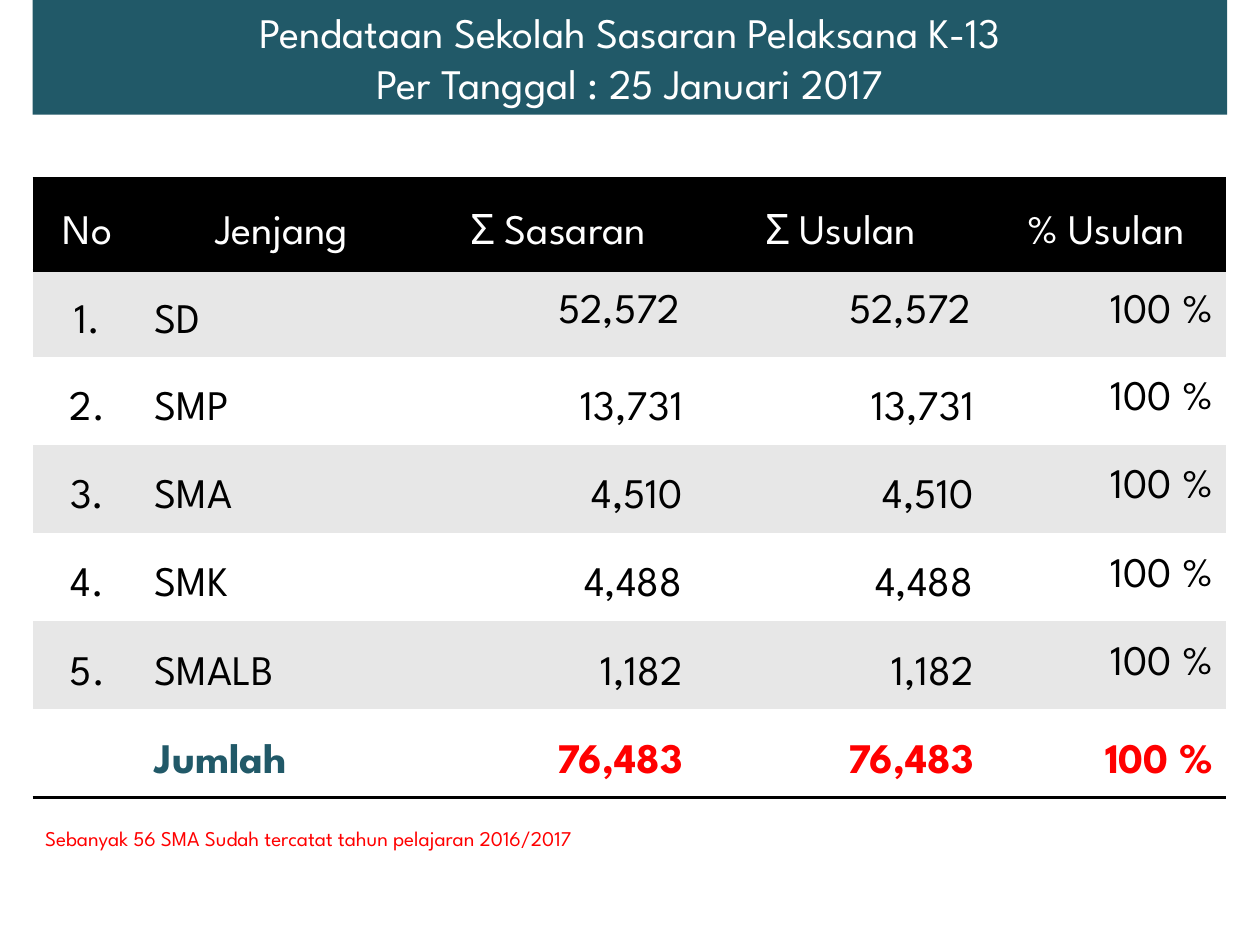
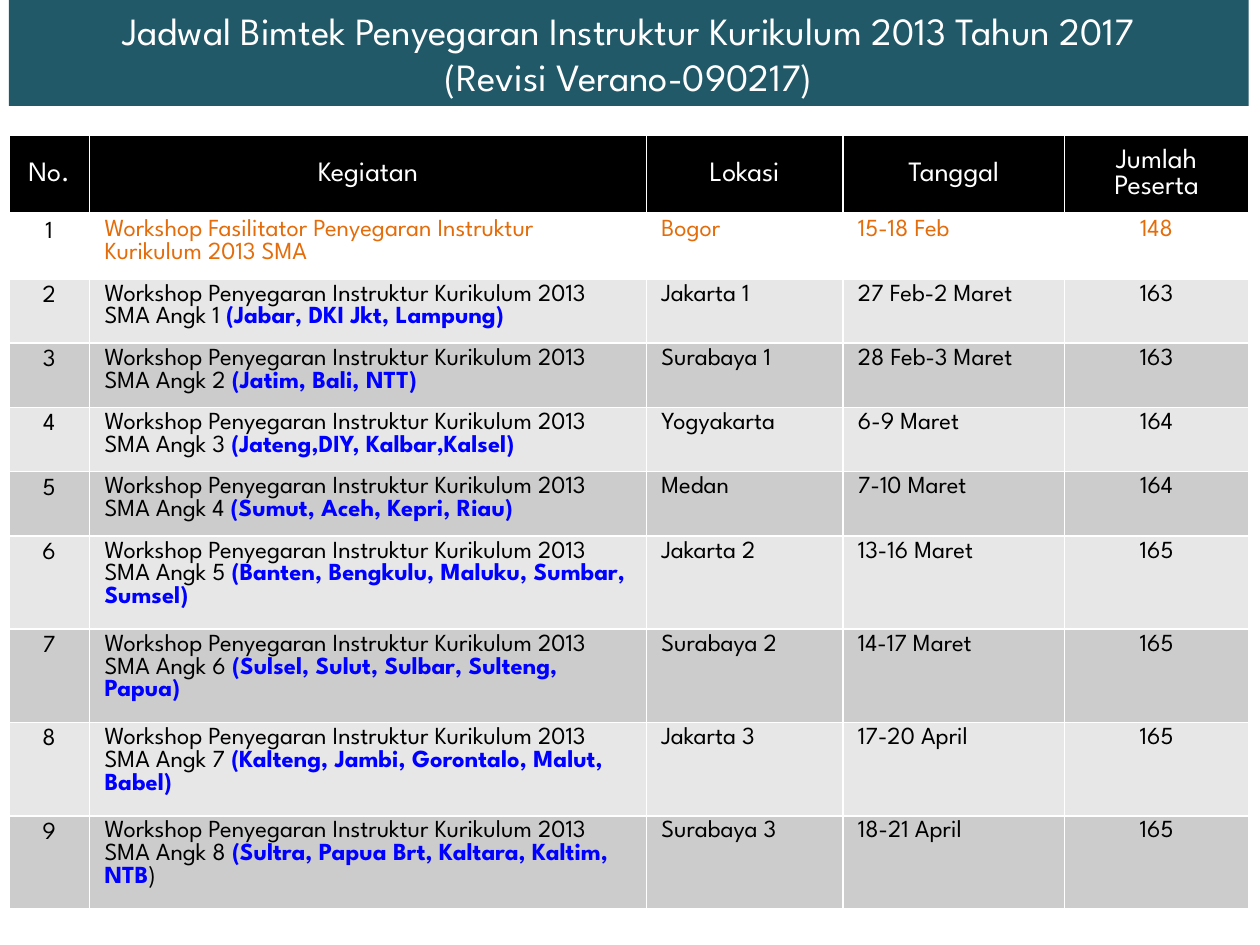
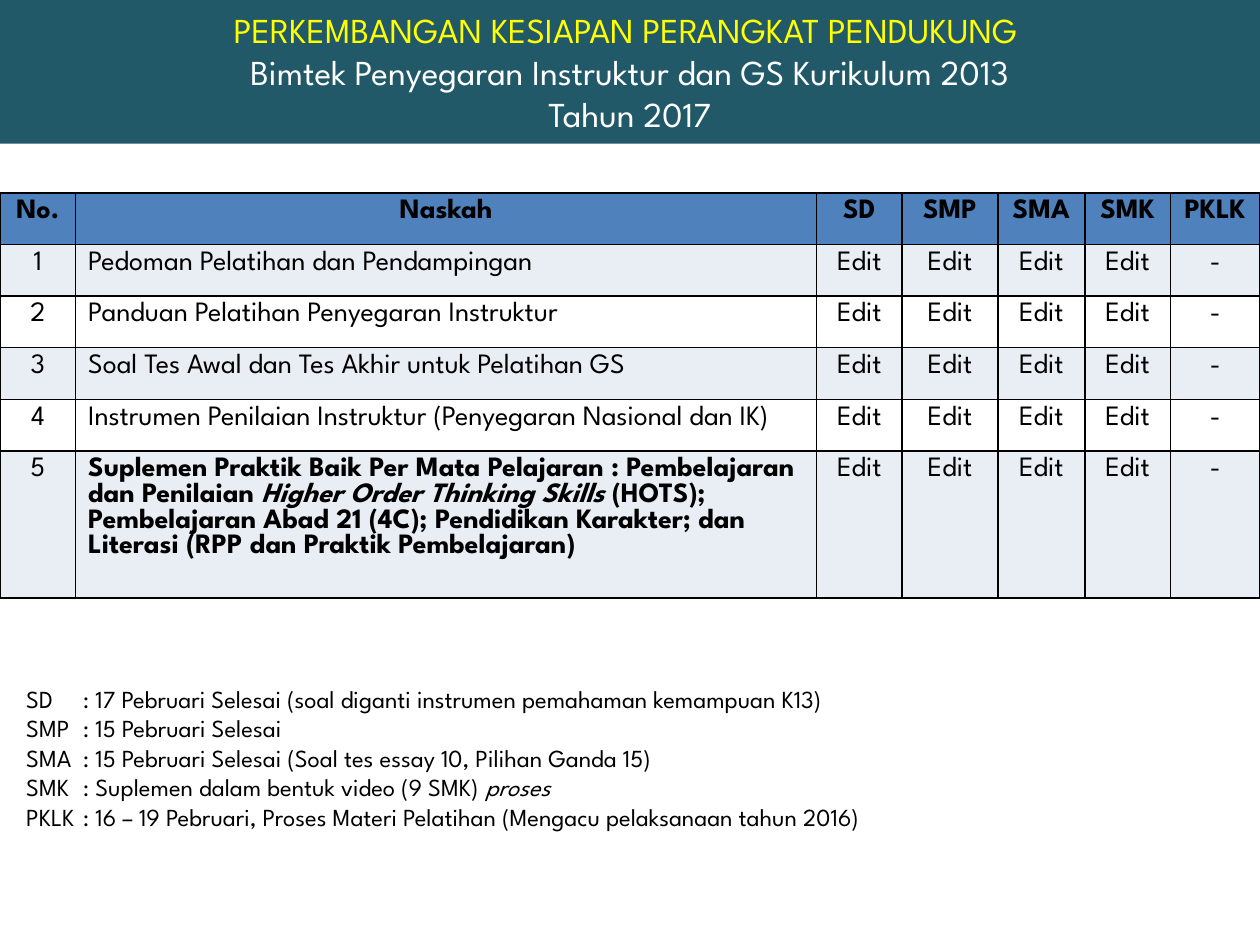
import pptx
import pptx.util
import pptx.dml.color
import pptx.enum.shapes
import pptx.enum.text
import pptx.oxml.ns
import lxml.etree
from dataclasses import dataclass


@dataclass(frozen=True)
class Theme:
    font: str = "League Spartan"
    teal: str = "215968"
    white: str = "FFFFFF"
    black: str = "000000"
    red: str = "FF0000"
    yellow: str = "FFFF00"
    orange: str = "E46C0A"
    blue: str = "0000FF"
    light: str = "E7E7E7"
    gray: str = "CCCCCC"
    head: str = "4F81BD"
    pale: str = "E9EDF4"
    huge: int = 24
    large: int = 22
    title: int = 20
    body: int = 16
    small: int = 14
    tiny: int = 12


T = Theme()
WIDE, HIGH = 10, 7.5
inch = pptx.util.Inches
ALIGN = pptx.enum.text.PP_ALIGN
AL = {"l": ALIGN.LEFT, "c": ALIGN.CENTER, "r": ALIGN.RIGHT}
MID = pptx.enum.text.MSO_ANCHOR.MIDDLE
TOP = pptx.enum.text.MSO_ANCHOR.TOP

# Content: schools
SCHOOL_TITLE = ["Pendataan Sekolah Sasaran Pelaksana K-13",
                "Per Tanggal : 25 Januari 2017"]
LEVELS = [("SD", "52,572"), ("SMP", "13,731"), ("SMA", "4,510"),
          ("SMK", "4,488"), ("SMALB", "1,182")]
SCHOOLS = [("No", "Jenjang", "Σ Sasaran", "Σ Usulan", "% Usulan")]
SCHOOLS += [(f"{n}.", name, sum_, sum_, "100 %")
            for n, (name, sum_) in enumerate(LEVELS, 1)]
SCHOOLS += [("", "Jumlah", "76,483", "76,483", "100 %")]
SCHOOL_NOTE = "Sebanyak 56 SMA Sudah tercatat tahun pelajaran 2016/2017"

# Content: schedule
PLAN_TITLE = ["Jadwal Bimtek Penyegaran Instruktur Kurikulum 2013 Tahun 2017",
              "(Revisi Verano-090217)"]
PLAN_HEAD = ("No.", "Kegiatan", "Lokasi", "Tanggal", "Jumlah Peserta")
FIRST = ("1", "Workshop Fasilitator Penyegaran Instruktur Kurikulum 2013 SMA",
         "Bogor", "15-18 Feb", "148")
BATCH = "Workshop Penyegaran Instruktur Kurikulum 2013 SMA Angk "
BATCHES = [
    ("(Jabar, DKI Jkt, Lampung)", "Jakarta 1", "27 Feb-2 Maret", "163"),
    ("(Jatim, Bali, NTT)", "Surabaya 1", "28 Feb-3 Maret", "163"),
    ("(Jateng,DIY, Kalbar,Kalsel)", "Yogyakarta", "6-9 Maret", "164"),
    ("(Sumut, Aceh, Kepri, Riau)", "Medan", "7-10 Maret", "164"),
    ("(Banten, Bengkulu, Maluku, Sumbar, Sumsel)", "Jakarta 2", "13-16 Maret", "165"),
    ("(Sulsel, Sulut, Sulbar, Sulteng, Papua)", "Surabaya 2", "14-17 Maret", "165"),
    ("(Kalteng, Jambi, Gorontalo, Malut, Babel)", "Jakarta 3", "17-20 April", "165"),
    ("(Sultra, Papua Brt, Kaltara, Kaltim, NTB", "Surabaya 3", "18-21 April", "165"),
]

# Content: documents
DOC_TITLE = [[("PERKEMBANGAN KESIAPAN PERANGKAT PENDUKUNG ", {"color": T.yellow})],
             "Bimtek Penyegaran Instruktur dan GS Kurikulum 2013",
             "Tahun 2017"]
DOC_HEAD = ("No.", "Naskah", "SD", "SMP", "SMA", "SMK", "PKLK")
BOLD = {"bold": True}
DOCS = [
    "Pedoman Pelatihan dan Pendampingan",
    "Panduan Pelatihan Penyegaran Instruktur",
    "Soal Tes Awal dan Tes Akhir untuk Pelatihan GS",
    "Instrumen Penilaian Instruktur (Penyegaran Nasional dan IK)",
    [("Suplemen Praktik Baik Per Mata Pelajaran : Pembelajaran dan Penilaian ", BOLD),
     ("Higher Order Thinking Skills", {"bold": True, "italic": True}),
     (" (HOTS); Pembelajaran Abad 21 (4C); Pendidikan Karakter; dan Literasi "
      "(RPP dan Praktik Pembelajaran)", BOLD)],
]
NOTES = [
    "SD\t: 17 Pebruari Selesai (soal diganti instrumen pemahaman kemampuan K13)",
    "SMP\t: 15 Pebruari Selesai",
    "SMA\t: 15 Pebruari Selesai (Soal tes essay 10, Pilihan Ganda 15)",
    [("SMK\t: Suplemen dalam bentuk video (9 SMK) ", {}), ("proses", {"italic": True})],
    "PKLK\t: 16 – 19 Pebruari, Proses Materi Pelatihan (Mengacu pelaksanaan tahun 2016)",
]


# Text helpers
def rgb(code):
    return pptx.dml.color.RGBColor.from_string(code)


def write(para, text, size, color, align="l", bold=False, space=None):
    para.alignment = AL[align]
    if space:
        para.line_spacing = space
    for part, style in ([(text, {})] if isinstance(text, str) else text):
        run = para.add_run()
        run.text = part
        font = run.font
        font.name, font.size = T.font, pptx.util.Pt(size)
        font.bold = style.get("bold", bold)
        font.italic = style.get("italic", False)
        font.color.rgb = rgb(style.get("color", color))


def fill_text(frame, lines, size, color, align="l"):
    for n, line in enumerate(lines):
        para = frame.add_paragraph() if n else frame.paragraphs[0]
        write(para, line, size, color, align)


def band(slide, left, top, width, height, lines, size):
    box = slide.shapes.add_shape(pptx.enum.shapes.MSO_SHAPE.RECTANGLE,
                                 inch(left), inch(top), inch(width), inch(height))
    box.shadow.inherit = False
    box.fill.solid()
    box.fill.fore_color.rgb = rgb(T.teal)
    box.line.fill.background()
    box.text_frame.word_wrap = True
    box.text_frame.vertical_anchor = MID
    fill_text(box.text_frame, lines, size, T.white, "c")


def note(slide, left, top, width, height, lines, size, color, wrap=True):
    box = slide.shapes.add_textbox(inch(left), inch(top), inch(width), inch(height))
    box.text_frame.word_wrap = wrap
    fill_text(box.text_frame, lines, size, color)
    return box.text_frame


# Table helpers
def child(node, tag, **attrs):
    return lxml.etree.SubElement(node, pptx.oxml.ns.qn(tag), attrs)


def edge(cell, lines):
    props = cell._tc.get_or_add_tcPr()
    for side in "LRTB":
        color, width = lines.get(side, (None, 0))
        line = child(props, f"a:ln{side}", w=str(pptx.util.Pt(width)))
        if color:
            child(child(line, "a:solidFill"), "a:srgbClr", val=color)
        else:
            child(line, "a:noFill")


def grid(slide, left, top, cols, highs, rows, look):
    """look(row, col) gives text style, fill, edges, anchor and margins."""
    table = slide.shapes.add_table(len(rows), len(cols), inch(left), inch(top),
                                   inch(sum(cols)), inch(sum(highs))).table
    table.first_row = table.horz_banding = False
    for col, width in zip(table.columns, cols):
        col.width = inch(width)
    for row, high in zip(table.rows, highs):
        row.height = inch(high)
    for r, row in enumerate(rows):
        for c, text in enumerate(row):
            cell, style = table.cell(r, c), look(r, c)
            edge(cell, style["edges"])
            if style["fill"]:
                cell.fill.solid()
                cell.fill.fore_color.rgb = rgb(style["fill"])
            else:
                cell.fill.background()
            cell.vertical_anchor = style.get("anchor", TOP)
            if "pad" in style:
                side, above, below = style["pad"]
                cell.margin_left = cell.margin_right = inch(side)
                cell.margin_top, cell.margin_bottom = inch(above), inch(below)
            if text:
                write(cell.text_frame.paragraphs[0], text, **style["text"])


# Looks of the three tables
def school_look(r, c):
    last = len(SCHOOLS) - 1
    rule = (T.black, 2)
    color = T.white if r == 0 else T.black
    if r == last:
        color = T.teal if c == 1 else T.red
    single = 0 < r < last and (c == 4 or r == 1 and c > 1)
    edges = {}
    if r < 2:
        edges["T"] = rule
    if r in (0, last):
        edges["B"] = rule
    style = {"fill": T.black if r == 0 else (T.white, T.light)[r % 2],
             "edges": edges, "anchor": MID,
             "text": {"size": T.huge, "color": color, "bold": r == last,
                      "align": "c" if r == 0 else "clrrr"[c],
                      "space": None if single else 1.5}}
    if r == 1 and c in (2, 3):
        style["pad"] = (0.12, 0.05, 0.05)
    return style


def plan_look(r, c):
    edges = dict.fromkeys("LRTB", (T.white, 1))
    if r < 2:
        edges["B" if r == 0 else "T"] = (T.white, 3)
    if r == 0:
        return {"fill": T.black, "edges": edges, "anchor": MID,
                "text": {"size": T.body, "color": T.white, "align": "c"}}
    style = {"fill": None if r == 1 else (T.light, T.gray)[r % 2], "edges": edges,
             "text": {"size": T.small, "align": "clllc"[c],
                      "color": T.orange if r == 1 and c else T.black}}
    if c:
        style["pad"] = (0.12, 0.04, 0)
    return style


def doc_look(r, c):
    return {"fill": T.head if r == 0 else (T.white, T.pale)[r % 2],
            "edges": dict.fromkeys("LRTB", (T.black, 1)),
            "text": {"size": T.body, "color": T.black, "bold": r == 0,
                     "align": "l" if r and c == 1 else "c"}}


# Slides
def schools(slide):
    left = 0.26
    band(slide, left, 0, WIDE - 2 * left, 0.91, SCHOOL_TITLE, T.huge)
    grid(slide, left, 1.42, [0.87, 2.21, 2.18, 2.31, 1.9],
         [0.73, 0.68] + [0.7] * 5, SCHOOLS, school_look)
    note(slide, left, 6.5, 5.18, 0.3, [SCHOOL_NOTE], T.tiny, T.red, wrap=False)


def plan(slide):
    rows = [PLAN_HEAD, FIRST]
    for n, (areas, *rest) in enumerate(BATCHES, 1):
        text = [(f"{BATCH}{n} ", {}), (areas, {"color": T.blue, "bold": True})]
        if not areas.endswith(")"):
            text.append((")", {}))
        rows.append((str(n + 1), text, *rest))
    grid(slide, 0.07, 1.07, [0.64, 4.42, 1.56, 1.76, 1.46],
         [0.63] + [0.51] * 5 + [0.74] * 4, rows, plan_look)
    band(slide, 0.07, 0, 9.84, 0.84, PLAN_TITLE, T.large)


def docs(slide):
    band(slide, 0, -0.01, WIDE, 1.15, DOC_TITLE, T.title)
    rows = [DOC_HEAD] + [(str(n), text, *["Edit"] * 4, "-")
                         for n, text in enumerate(DOCS, 1)]
    grid(slide, 0, 1.53, [0.6, 5.88, 0.68, 0.76, 0.69, 0.68, 0.71],
         [0.41] * 5 + [0.91], rows, doc_look)
    frame = note(slide, 0.11, 5.38, 9.39, 1.51, NOTES, T.small, T.black)
    for para in frame.paragraphs:
        stops = child(para._p.get_or_add_pPr(), "a:tabLst")
        child(stops, "a:tab", pos=str(inch(0.45)), algn="l")


def main():
    deck = pptx.Presentation()
    deck.slide_width, deck.slide_height = inch(WIDE), inch(HIGH)
    for build in (schools, plan, docs):
        build(deck.slides.add_slide(deck.slide_layouts[6]))
    deck.save("out.pptx")


if __name__ == "__main__":
    main()
